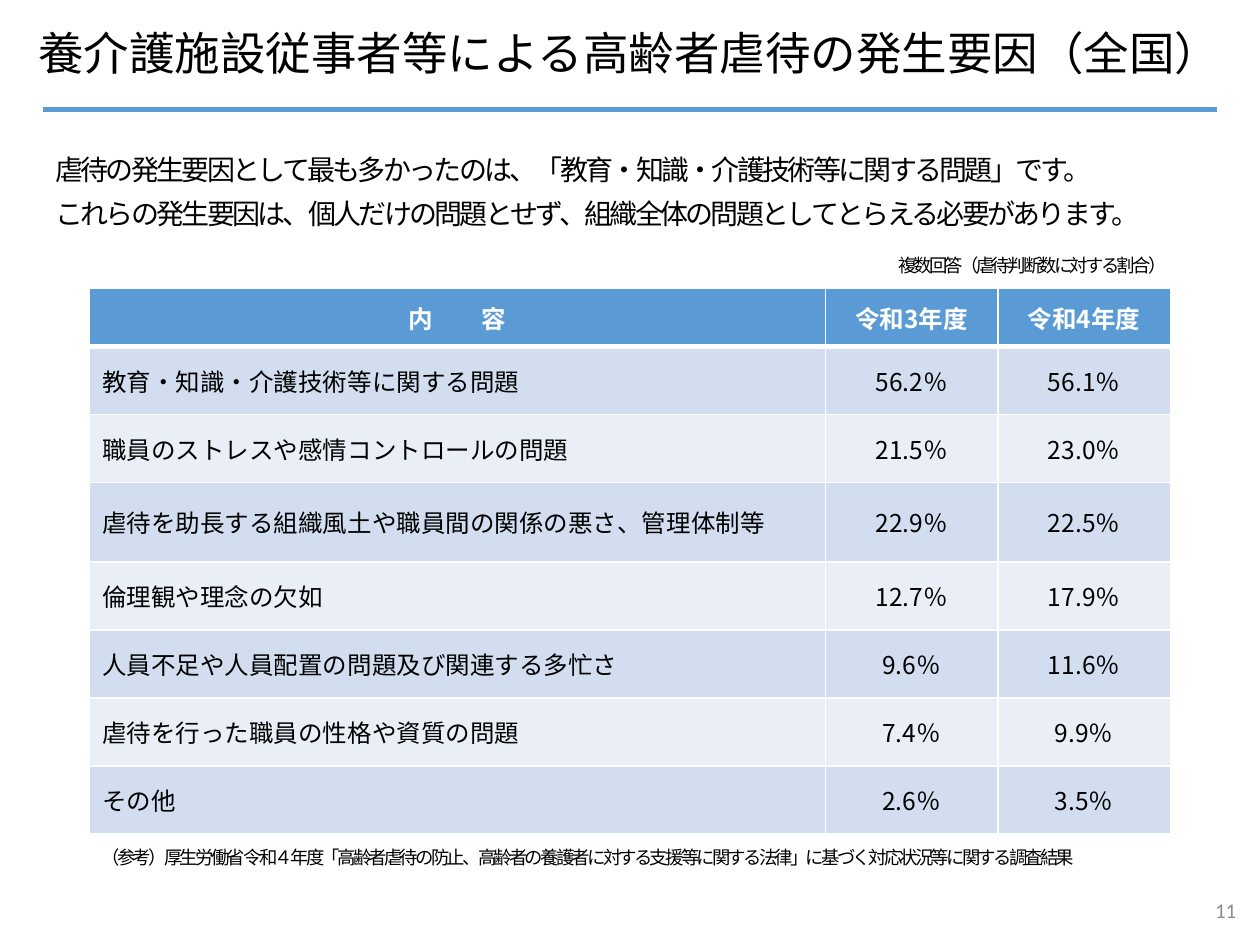
import pptx
import pptx.util
import pptx.dml.color
import pptx.enum.shapes
import pptx.enum.text
import pptx.oxml
import pptx.oxml.ns

Inches, Pt = pptx.util.Inches, pptx.util.Pt
RGBColor = pptx.dml.color.RGBColor
ALIGN = pptx.enum.text.PP_ALIGN
MIDDLE = pptx.enum.text.MSO_ANCHOR.MIDDLE
TOP = pptx.enum.text.MSO_ANCHOR.TOP
qn = pptx.oxml.ns.qn

BLACK = RGBColor(0x00, 0x00, 0x00)
WHITE = RGBColor(0xFF, 0xFF, 0xFF)
GREY = RGBColor(0x8C, 0x8C, 0x8C)
BLUE = RGBColor(0x5B, 0x9B, 0xD5)
BANDS = [RGBColor(0xD2, 0xDE, 0xEF), RGBColor(0xEA, 0xEF, 0xF7)]
JAPANESE = "Noto Sans CJK JP"
TIGHT = -1.5

TITLE = "養介護施設従事者等による高齢者虐待の発生要因（全国）"
LEAD = [
    "虐待の発生要因として最も多かったのは、「教育・知識・介護技術等に関する問題」です。",
    "これらの発生要因は、個人だけの問題とせず、組織全体の問題としてとらえる必要があります。",
]
TABLE_NOTE = "複数回答（虐待判断数に対する割合）"
REFERENCE = ("（参考）厚生労働省 令和４年度「高齢者虐待の防止、高齢者の養護者に対する"
             "支援等に関する法律」に基づく対応状況等に関する調査結果")
PAGE_NUMBER = "11"
HEADER = ("内　　容", "令和3年度", "令和4年度")
CAUSES = [
    ("教育・知識・介護技術等に関する問題", "56.2％", "56.1％"),
    ("職員のストレスや感情コントロールの問題", "21.5％", "23.0％"),
    ("虐待を助長する組織風土や職員間の関係の悪さ、管理体制等", "22.9％", "22.5％"),
    ("倫理観や理念の欠如", "12.7％", "17.9％"),
    ("人員不足や人員配置の問題及び関連する多忙さ", "9.6％", "11.6％"),
    ("虐待を行った職員の性格や資質の問題", "7.4％", "9.9％"),
    ("その他", "2.6％", "3.5％"),
]
COLUMN_WIDTHS = [5.84, 1.37, 1.37]
ROW_HEIGHTS = [0.46, 0.54, 0.54, 0.63, 0.54, 0.54, 0.54, 0.54]


def write(frame, lines, size, color=BLACK, font=JAPANESE, bold=False,
          spacing=None, **paragraph_format):
    for index, line in enumerate(lines):
        para = frame.paragraphs[0] if index == 0 else frame.add_paragraph()
        for name, value in paragraph_format.items():
            setattr(para, name, value)
        span = para.add_run()
        span.text = line
        for name, value in {"name": font, "size": Pt(size), "bold": bold}.items():
            setattr(span.font, name, value)
        span.font.color.rgb = color
        properties = span.font._element
        east_asian = pptx.oxml.parse_xml(
            f'<a:ea {pptx.oxml.ns.nsdecls("a")} typeface="{font}"/>')
        properties.find(qn("a:latin")).addnext(east_asian)
        if spacing is not None:
            properties.set("spc", str(int(spacing * 100)))


def add_text(page, area, lines, size, anchor=TOP, **text_format):
    box = page.shapes.add_textbox(*map(Inches, area))
    box.text_frame.word_wrap = True
    box.text_frame.vertical_anchor = anchor
    write(box.text_frame, lines, size, **text_format)


def set_borders(cell, widths):
    """Draw white borders; widths are points for left, right, top, bottom."""
    properties = cell._tc.get_or_add_tcPr()
    for index, (side, width) in enumerate(zip("LRTB", widths)):
        properties.insert(index, pptx.oxml.parse_xml(
            f'<a:ln{side} {pptx.oxml.ns.nsdecls("a")} w="{Pt(width)}">'
            f'<a:solidFill><a:srgbClr val="{WHITE}"/></a:solidFill></a:ln{side}>'))


def add_rule(page):
    rule = page.shapes.add_connector(
        pptx.enum.shapes.MSO_CONNECTOR.STRAIGHT,
        *map(Inches, (0.34, 0.87, 9.66, 0.87)))
    rule.line.color.rgb = BLUE
    rule.line.width = Pt(3.25)
    rule._element.spPr.append(pptx.oxml.parse_xml(
        f'<a:effectLst {pptx.oxml.ns.nsdecls("a")}/>'))


def add_cause_table(page):
    rows = [HEADER] + CAUSES
    table = page.shapes.add_table(
        len(rows), len(HEADER), Inches(0.71), Inches(2.29),
        Inches(sum(COLUMN_WIDTHS)), Inches(sum(ROW_HEIGHTS))).table
    for column, width in zip(table.columns, COLUMN_WIDTHS):
        column.width = Inches(width)
    for row, height in zip(table.rows, ROW_HEIGHTS):
        row.height = Inches(height)
    for r, texts in enumerate(rows):
        is_header = r == 0
        for c, text in enumerate(texts):
            cell = table.cell(r, c)
            cell.vertical_anchor = MIDDLE
            cell.fill.solid()
            cell.fill.fore_color.rgb = BLUE if is_header else BANDS[(r - 1) % 2]
            set_borders(cell, (1, 1, 3 if r == 1 else 1, 3 if is_header else 1))
            write(cell.text_frame, [text], 14,
                  color=WHITE if is_header else BLACK, bold=is_header,
                  alignment=ALIGN.CENTER if is_header or c else ALIGN.LEFT)


def main():
    deck = pptx.Presentation()
    deck.slide_width, deck.slide_height = Inches(10), Inches(7.5)
    page = deck.slides.add_slide(deck.slide_layouts[6])
    add_text(page, (0, 0.01, 10, 0.86), [TITLE], 26, MIDDLE,
             alignment=ALIGN.CENTER, line_spacing=0.9)
    add_rule(page)
    add_text(page, (7.66, 7.02, 2.25, 0.4), [PAGE_NUMBER], 12, MIDDLE,
             color=GREY, font="Calibri", alignment=ALIGN.RIGHT)
    add_text(page, (0.34, 1.08, 9.48, 0.75), LEAD, 16,
             spacing=TIGHT, line_spacing=Pt(25))
    add_cause_table(page)
    add_text(page, (7.03, 1.97, 2.42, 0.28), [TABLE_NOTE], 10.5, spacing=TIGHT)
    add_text(page, (0.71, 6.67, 8.34, 0.28), [REFERENCE], 10.5, spacing=TIGHT)
    deck.save("out.pptx")


if __name__ == "__main__":
    main()
